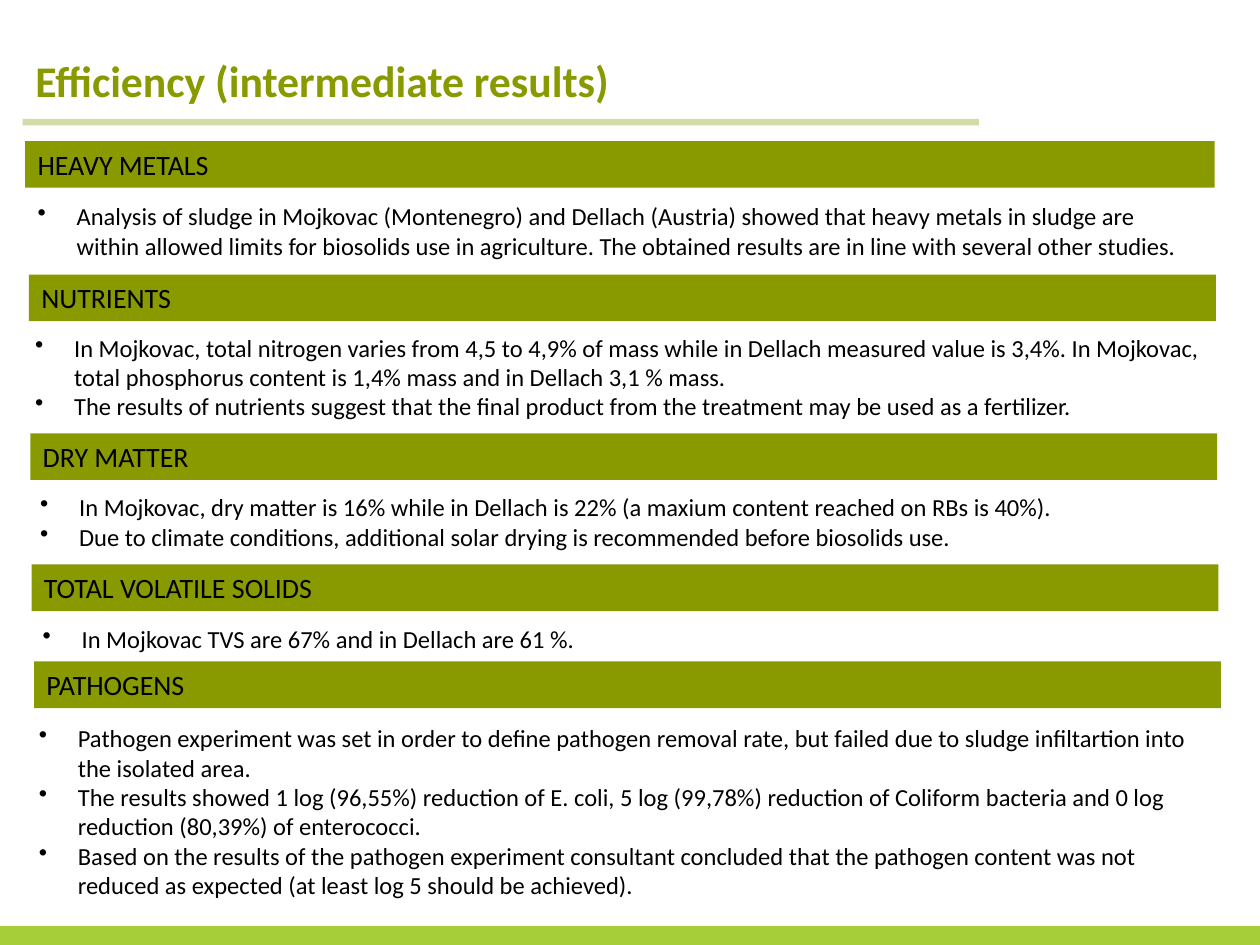
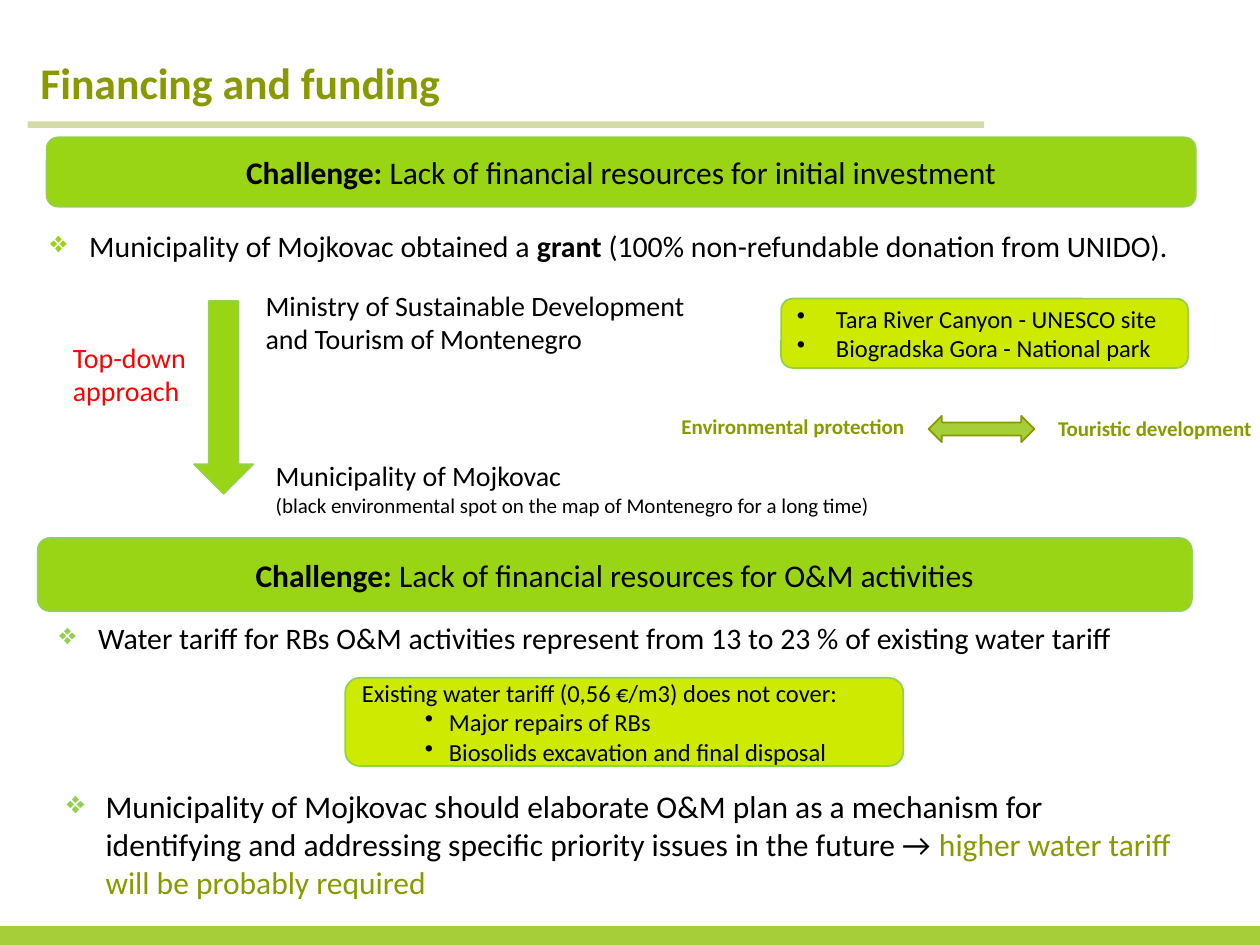
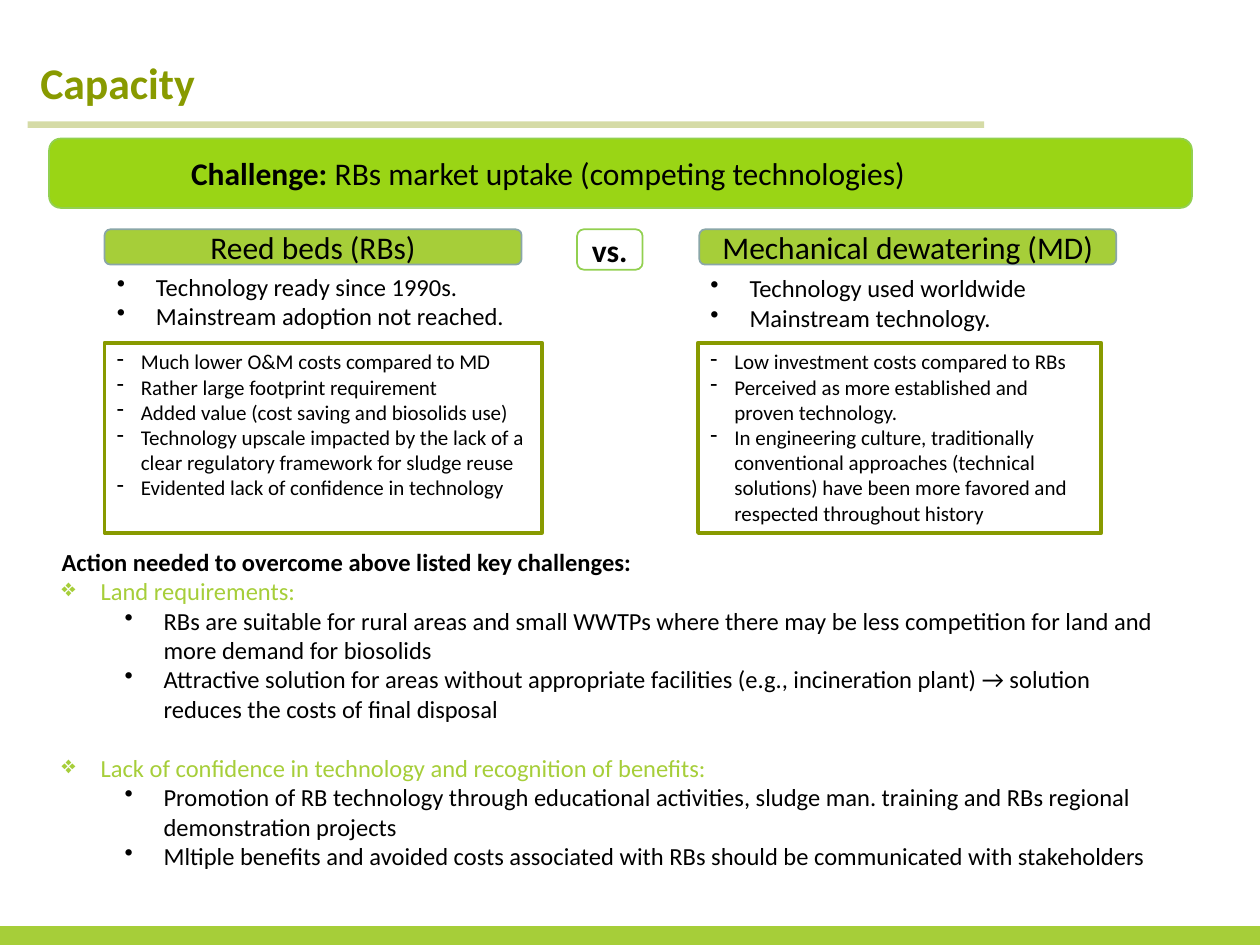
"""Build three slides on sludge treatment results, financing and capacity."""
from dataclasses import dataclass
from typing import NamedTuple, Optional

from lxml.etree import SubElement
from pptx import Presentation
from pptx.dml.color import RGBColor
from pptx.enum.shapes import MSO_CONNECTOR, MSO_SHAPE as Shape
from pptx.enum.text import MSO_ANCHOR as Anchor, MSO_AUTO_SIZE as AutoSize, PP_ALIGN as Align
from pptx.oxml.ns import qn
from pptx.util import Inches, Pt

COLUMNS, ROWS = 100, 75
SLIDE_WIDTH, SLIDE_HEIGHT = Inches(10), Inches(7.5)
FONT = "Calibri"
BLACK, RED, OLIVE, LEAF = "000000", "FF0000", "889A00", "A6CE39"
LIME, YELLOW, EDGE, GREY_EDGE = "9AD515", "CEEA00", "92D050", "8AA6A8"
TITLE_SIZE, TITLE_LEADING = 25, 13
RULE_WIDTH, RULE_OPACITY = 75.9, 35


class Place(NamedTuple):
    """A rectangle in grid columns and rows."""
    left: float
    top: float
    width: float
    height: float


class Span(NamedTuple):
    """A stretch of text with its own weight and colour."""
    text: str
    bold: bool = False
    color: str = BLACK


class Bullet(NamedTuple):
    """A bullet sign with its indents in inches."""
    sign: str
    margin: float = 0.31
    hang: float = 0.31
    color: Optional[str] = None
    level: int = 0


@dataclass
class Para:
    """A paragraph with its spans and layout."""
    spans: list[Span]
    size: float = 14
    bullet: Optional[Bullet] = None
    align: Align = Align.LEFT
    before: float = 0
    leading: Optional[float] = None


@dataclass
class Look:
    """The outline, fill and text anchor of a shape."""
    kind: Shape = Shape.RECTANGLE
    fill: Optional[str] = None
    line: Optional[str] = None
    weight: float = 1
    anchor: Anchor = Anchor.TOP


@dataclass
class Section:
    """A heading band with the findings under it."""
    heading: str
    band: Place
    body: Place
    findings: list[str]


@dataclass
class Option:
    """One of the compared technologies."""
    name: str
    header: Place
    status_place: Place
    status: list[str]
    traits_place: Place
    traits: list[str]


DOT, DASH = Bullet("•"), Bullet("-", 0.19, 0.19)
SUB_DOT = Bullet("•", 0.81, level=1)
DIAMOND, LIME_DIAMOND, EDGE_DIAMOND = (Bullet("❖", color=color) for color in (None, LIME, EDGE))
BAND = Look(fill=OLIVE)
CHALLENGE = Look(Shape.ROUNDED_RECTANGLE, LIME, EDGE, anchor=Anchor.MIDDLE)
NOTE = Look(Shape.ROUNDED_RECTANGLE, YELLOW, EDGE, anchor=Anchor.MIDDLE)
HEADER = Look(Shape.ROUNDED_RECTANGLE, LEAF, GREY_EDGE, anchor=Anchor.MIDDLE)
VERSUS = Look(Shape.ROUNDED_RECTANGLE, line=EDGE, anchor=Anchor.MIDDLE)
FRAME = Look(line=OLIVE, weight=2.25)

SECTIONS = [
    Section("HEAVY METALS", Place(2, 11.2, 94.4, 3.7), Place(2, 15.5, 94.4, 5.7), [
        "Analysis of sludge in Mojkovac (Montenegro) and Dellach (Austria) showed that heavy metals in "
        "sludge are within allowed limits for biosolids use in agriculture. The obtained results are in "
        "line with several other studies."]),
    Section("NUTRIENTS", Place(2.3, 21.8, 94.2, 3.7), Place(1.8, 25.9, 94.8, 8.1), [
        "In Mojkovac, total nitrogen varies from 4,5 to 4,9% of mass while in Dellach measured value is "
        "3,4%. In Mojkovac, total phosphorus content is 1,4% mass and in Dellach 3,1 % mass.",
        "The results of nutrients suggest that the final product from the treatment may be used as a "
        "fertilizer."]),
    Section("DRY MATTER", Place(2.4, 34.4, 94.2, 3.7), Place(2.2, 38.6, 94.8, 5.7), [
        "In Mojkovac, dry matter is 16% while in Dellach is 22% (a maxium content reached on RBs is 40%).",
        "Due to climate conditions, additional solar drying is recommended before biosolids use."]),
    Section("TOTAL VOLATILE SOLIDS", Place(2.5, 44.8, 94.2, 3.7), Place(2.4, 49, 94.6, 3.4), [
        "In Mojkovac TVS are 67% and in Dellach are 61 %."]),
    Section("PATHOGENS", Place(2.7, 52.5, 94.2, 3.7), Place(2.1, 56.9, 94.6, 15.1), [
        "Pathogen experiment was set in order to define pathogen removal rate, but failed due to sludge "
        "infiltartion into the isolated area.",
        "The results showed 1 log (96,55%) reduction of E. coli, 5 log (99,78%) reduction of Coliform "
        "bacteria and 0 log reduction (80,39%) of enterococci.",
        "Based on the results of the pathogen experiment consultant concluded that the pathogen content "
        "was not reduced as expected (at least log 5 should be achieved)."]),
]

OPTIONS = [
    Option("Reed beds (RBs)", Place(8.3, 18.2, 33.1, 2.8), Place(8.3, 21.1, 36.3, 5.7),
           ["Technology ready since 1990s.", "Mainstream adoption not reached."],
           Place(8.3, 27.2, 34.7, 15.1),
           ["Much lower O&M costs compared to MD",
            "Rather large footprint requirement",
            "Added value (cost saving and biosolids use)",
            "Technology upscale impacted by the lack of a clear regulatory framework for sludge reuse",
            "Evidented lack of confidence in technology"]),
    Option("Mechanical dewatering (MD)", Place(55.5, 18.2, 33.1, 2.8), Place(55.4, 21.2, 33.1, 5.7),
           ["Technology used worldwide", "Mainstream technology."],
           Place(55.4, 27.2, 32, 15.1),
           ["Low investment costs compared to RBs",
            "Perceived as more established and proven technology.",
            "In engineering culture, traditionally conventional approaches (technical solutions) have "
            "been more favored and respected throughout history"]),
]

ACTIONS = {
    "Land requirements:": [
        "RBs are suitable for rural areas and small WWTPs where there may be less competition for land "
        "and more demand for biosolids",
        "Attractive solution for areas without appropriate facilities (e.g., incineration plant) → "
        "solution reduces the costs of final disposal"],
    "Lack of confidence in technology and recognition of benefits:": [
        "Promotion of RB technology through educational activities, sludge man. training and RBs "
        "regional demonstration projects",
        "Mltiple benefits and avoided costs associated with RBs should be communicated with stakeholders"],
}


def rgb(color: str) -> RGBColor:
    """Turn a hex string into a colour."""
    return RGBColor.from_string(color)


def across(columns: float) -> int:
    """Measure grid columns in slide units."""
    return round(SLIDE_WIDTH * columns / COLUMNS)


def down(rows: float) -> int:
    """Measure grid rows in slide units."""
    return round(SLIDE_HEIGHT * rows / ROWS)


def bounds(place: Place) -> tuple[int, int, int, int]:
    """Measure a place in slide units."""
    return across(place.left), down(place.top), across(place.width), down(place.height)


def plain(text: str, size: float = 14, color: str = BLACK, bold: bool = False,
          bullet: Optional[Bullet] = None, **layout) -> Para:
    """Make a paragraph of one span."""
    return Para([Span(text, bold, color)], size, bullet, **layout)


def listed(texts: list[str], bullet: Bullet, size: float = 14, **layout) -> list[Para]:
    """Make one bulleted paragraph for each text."""
    return [plain(text, size, bullet=bullet, **layout) for text in texts]


def add_bullet(paragraph, bullet: Bullet) -> None:
    """Give a paragraph a hanging bullet."""
    paragraph.level = bullet.level
    properties = paragraph._p.get_or_add_pPr()
    properties.set("marL", str(Inches(bullet.margin)))
    properties.set("indent", str(-Inches(bullet.hang)))
    if bullet.color:
        SubElement(SubElement(properties, qn("a:buClr")), qn("a:srgbClr")).set("val", bullet.color)
    SubElement(properties, qn("a:buChar")).set("char", bullet.sign)


def write(shape, paras: list[Para], anchor: Anchor = Anchor.TOP, wrap: bool = True) -> None:
    """Write formatted paragraphs into a shape."""
    frame = shape.text_frame
    frame.auto_size = AutoSize.NONE
    frame.word_wrap, frame.vertical_anchor = wrap, anchor
    for index, para in enumerate(paras):
        paragraph = frame.add_paragraph() if index else frame.paragraphs[0]
        if para.bullet:
            add_bullet(paragraph, para.bullet)
        paragraph.alignment = para.align
        if para.before:
            paragraph.space_before = Pt(para.before)
        if para.leading:
            paragraph.line_spacing = Pt(para.leading)
        for span in para.spans:
            run = paragraph.add_run()
            run.text = span.text
            run.font.name, run.font.size, run.font.bold = FONT, Pt(para.size), span.bold
            run.font.color.rgb = rgb(span.color)


def add_text(page, place: Place, paras: list[Para], wrap: bool = True) -> None:
    """Add a text box."""
    write(page.shapes.add_textbox(*bounds(place)), paras, wrap=wrap)


def add_box(page, place: Place, look: Look, paras: Optional[list[Para]] = None) -> None:
    """Add a preset shape, with text if there is any."""
    box = page.shapes.add_shape(look.kind, *bounds(place))
    box.shadow.inherit = False
    if look.fill:
        box.fill.solid()
        box.fill.fore_color.rgb = rgb(look.fill)
    else:
        box.fill.background()
    if look.line:
        box.line.color.rgb = rgb(look.line)
        box.line.width = Pt(look.weight)
    else:
        box.line.fill.background()
    if paras:
        write(box, paras, look.anchor)


def add_rule(page, left: float, top: float) -> None:
    """Add the translucent rule under a title."""
    rule = page.shapes.add_connector(MSO_CONNECTOR.STRAIGHT, across(left), down(top),
                                     across(left + RULE_WIDTH), down(top))
    rule.line.color.rgb = rgb(OLIVE)
    rule.line.width = Pt(3.75)
    color = next(rule._element.spPr.iter(qn("a:srgbClr")))
    SubElement(color, qn("a:alpha")).set("val", str(RULE_OPACITY * 1000))
    SubElement(rule._element.spPr, qn("a:effectLst"))


def add_page(deck, title: str, left: float = 2.2, top: float = 6.3, rule_top: float = 9.9):
    """Add a slide with its footer band, title and rule."""
    page = deck.slides.add_slide(deck.slide_layouts.get_by_name("Title Only"))
    add_box(page, Place(0, 73.5, COLUMNS, 1.5), Look(fill=LEAF))
    heading = page.shapes.title
    heading.left, heading.top, heading.width, heading.height = bounds(Place(left, top, 80.9, 3.3))
    write(heading, [plain(title, TITLE_SIZE, OLIVE, True, leading=TITLE_LEADING)])
    add_rule(page, left, rule_top)
    return page


def challenge(text: str, **layout) -> list[Para]:
    """Make the text of a challenge band."""
    return [Para([Span("Challenge: ", True), Span(text)], 18, **layout)]


def build_efficiency(deck) -> None:
    """Build the slide of intermediate results."""
    page = add_page(deck, "Efficiency (intermediate results)", 1.8, 6.1, 9.7)
    for section in SECTIONS:
        add_box(page, section.band, BAND, [plain(section.heading, 16)])
        add_text(page, section.body, listed(section.findings, DOT))


def build_financing(deck) -> None:
    """Build the slide on financing and funding."""
    page = add_page(deck, "Financing and funding")
    add_box(page, Place(3.7, 10.9, 91.2, 5.5), CHALLENGE,
            challenge("Lack of financial resources for initial investment", align=Align.CENTER))
    add_text(page, Place(3, 17.6, 95.1, 3.9), [Para([
        Span("Municipality of Mojkovac obtained a "), Span("grant", True),
        Span(" (100% non-refundable donation from UNIDO).")], 17, LIME_DIAMOND)])

    add_text(page, Place(4.8, 26.5, 14.1, 6.4), [plain("Top-down approach", 16, RED)])
    add_box(page, Place(15.4, 23.9, 4.7, 15.3), Look(Shape.DOWN_ARROW, LIME, EDGE))
    add_text(page, Place(20.1, 22.4, 36.2, 6.4),
             [plain("Ministry of Sustainable Development and Tourism of Montenegro", 16)])
    add_text(page, Place(20.9, 35.9, 50, 5.7), [
        plain("Municipality of Mojkovac", 16),
        plain("(black environmental spot on the map of Montenegro for a long time)", 12)])

    add_box(page, Place(62, 23.7, 32.3, 5.5), NOTE, listed(
        ["Tara River Canyon - UNESCO site", "Biogradska Gora - National park"], DOT))
    add_text(page, Place(53.1, 32.3, 20, 3),
             [plain("Environmental protection", 12, OLIVE, True)], wrap=False)
    add_box(page, Place(73.7, 33, 8.4, 2.1), Look(Shape.LEFT_RIGHT_ARROW, LEAF, OLIVE))
    add_text(page, Place(83, 32.5, 17.6, 3),
             [plain("Touristic development", 12, OLIVE, True)], wrap=False)

    add_box(page, Place(3, 42.7, 91.6, 5.8), CHALLENGE,
            challenge("Lack of financial resources for O&M activities", align=Align.CENTER))
    add_text(page, Place(3.7, 48.7, 90.9, 3.9), listed(
        ["Water tariff for RBs O&M activities represent from 13 to 23 % of existing water tariff"],
        EDGE_DIAMOND, 17))
    add_box(page, Place(27.4, 53.8, 44.3, 7), NOTE, [
        plain("Existing water tariff (0,56 €/m3) does not cover:", align=Align.JUSTIFY),
        *listed(["Major repairs of RBs", "Biosolids excavation and final disposal"],
                Bullet("•", 0.69, 0.19, level=1), align=Align.JUSTIFY)])
    add_text(page, Place(4.3, 62, 90.6, 10.1), [Para([
        Span("Municipality of Mojkovac should elaborate O&M plan as a mechanism for identifying and "
             "addressing specific priority issues in the future → "),
        Span("higher water tariff will be probably required", color=OLIVE)], 18, EDGE_DIAMOND)])


def build_capacity(deck) -> None:
    """Build the slide that compares the technologies."""
    page = add_page(deck, "Capacity")
    band = Place(3.9, 11, 90.7, 5.5)
    add_box(page, band, CHALLENGE, challenge("RBs market uptake (competing technologies)"))
    page.shapes[-1].text_frame.margin_left = Inches(1.1)
    for option in OPTIONS:
        add_box(page, option.header, HEADER, [plain(option.name, 18, align=Align.CENTER)])
        add_text(page, option.status_place, listed(option.status, DOT))
        add_box(page, option.traits_place, FRAME, listed(option.traits, DASH, 12))
    add_box(page, Place(45.8, 18.2, 5.2, 3.2), VERSUS,
            [plain("vs.", 18, bold=True, align=Align.CENTER)])

    paras = [plain("Action needed to overcome above listed key challenges:", bold=True)]
    for index, (need, answers) in enumerate(ACTIONS.items()):
        paras.append(plain(need, color=LEAF, bullet=DIAMOND, before=17 * index))
        paras += listed(answers, SUB_DOT)
    add_text(page, Place(3.9, 42.9, 89.2, 26.9), paras)


def main() -> None:
    """Build and save the deck."""
    deck = Presentation()
    deck.slide_width, deck.slide_height = SLIDE_WIDTH, SLIDE_HEIGHT
    build_efficiency(deck)
    build_financing(deck)
    build_capacity(deck)
    deck.save("out.pptx")


if __name__ == "__main__":
    main()
